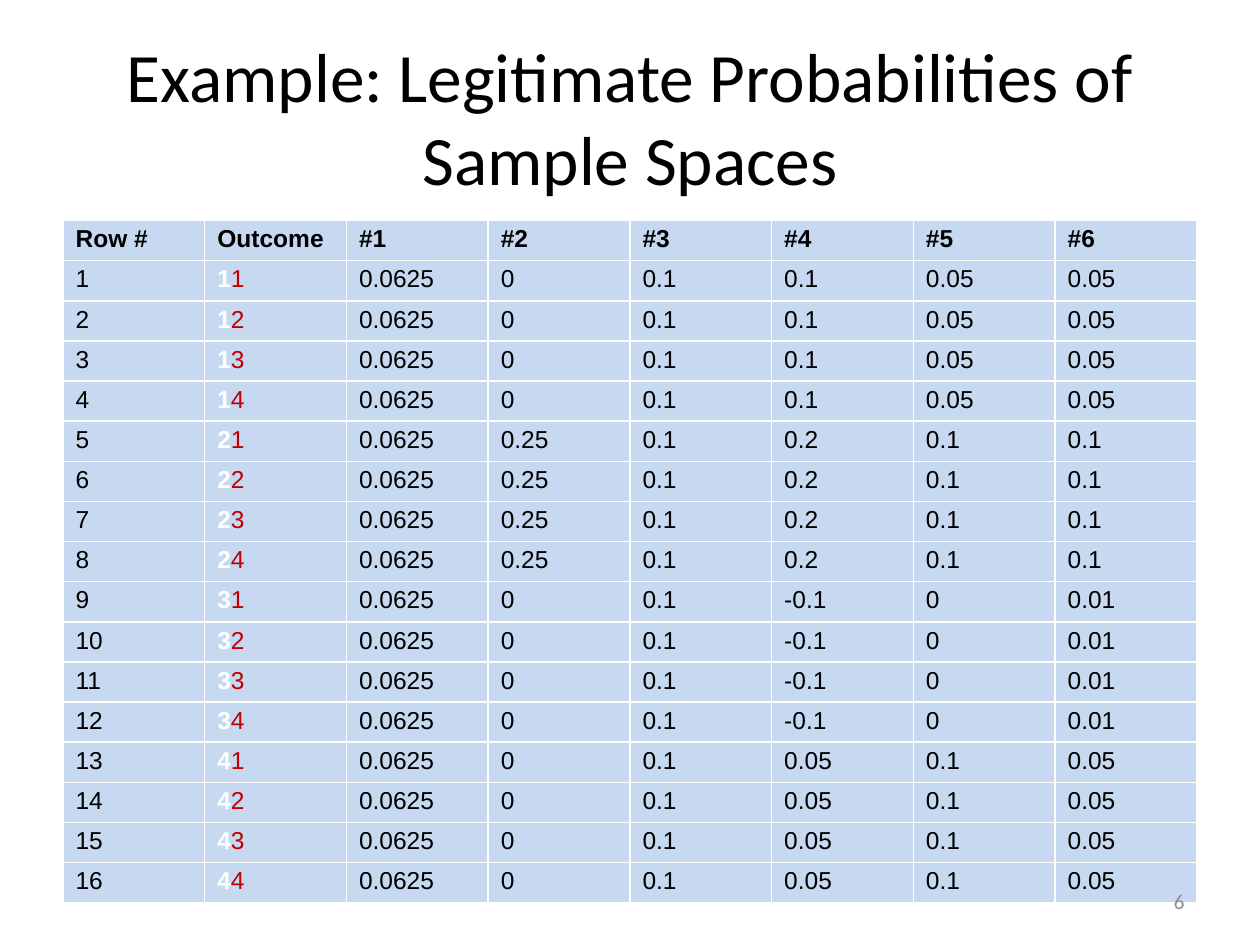
from lxml import etree
from pptx import Presentation
from pptx.dml.color import RGBColor
from pptx.enum.text import MSO_ANCHOR, PP_ALIGN
from pptx.oxml.ns import qn
from pptx.util import Inches, Pt

CENTER, RIGHT = PP_ALIGN.CENTER, PP_ALIGN.RIGHT
MIDDLE = MSO_ANCHOR.MIDDLE
TITLE_ONLY = 5

COLORS = {
    "text": "000000",
    "cell": "C6D9F1",
    "grid": "FFFFFF",
    "first_die": "FFFFFF",
    "second_die": "C00000",
    "page": "8C8C8C",
}
TITLE = "Example: Legitimate Probabilities of Sample Spaces"
HEADERS = ["Row #", "Outcome", "#1", "#2", "#3", "#4", "#5", "#6"]
# Probabilities depend only on the first of the two digits of an outcome
PROBABILITIES = {
    "1": ["0.0625", "0", "0.1", "0.1", "0.05", "0.05"],
    "2": ["0.0625", "0.25", "0.1", "0.2", "0.1", "0.1"],
    "3": ["0.0625", "0", "0.1", "-0.1", "0", "0.01"],
    "4": ["0.0625", "0", "0.1", "0.05", "0.1", "0.05"],
}


def add_run(paragraph, text, size, font, color, bold=False):
    run = paragraph.add_run()
    run.text = text
    run.font.size = Pt(size)
    run.font.name = font
    run.font.bold = bold
    run.font.color.rgb = RGBColor.from_string(COLORS[color])


def place_title(slide, box):
    title = slide.shapes.title
    title.left, title.top, title.width, title.height = box
    title.text_frame.vertical_anchor = MIDDLE
    title.text_frame.word_wrap = True
    paragraph = title.text_frame.paragraphs[0]
    paragraph.alignment = CENTER
    add_run(paragraph, TITLE, 39.6, "Calibri", "text")


def style_cell(cell):
    cell.margin_top = cell.margin_bottom = Inches(0.04)
    properties = cell._tc.get_or_add_tcPr()
    for side in ("lnL", "lnR", "lnT", "lnB"):
        line = etree.SubElement(properties, qn(f"a:{side}"), w=str(Pt(1)))
        fill = etree.SubElement(line, qn("a:solidFill"))
        etree.SubElement(fill, qn("a:srgbClr"), val=COLORS["grid"])
    cell.fill.solid()
    cell.fill.fore_color.rgb = RGBColor.from_string(COLORS["cell"])


def table_rows():
    """Each cell is a list of (text, color, bold) runs."""
    yield [[(header, "text", True)] for header in HEADERS]
    outcomes = [(first, second) for first in PROBABILITIES for second in "1234"]
    for number, (first, second) in enumerate(outcomes, start=1):
        outcome = [(first, "first_die", True), (second, "second_die", False)]
        values = [[(value, "text", False)] for value in PROBABILITIES[first]]
        yield [[(str(number), "text", False)], outcome, *values]


def place_probabilities(slide, box):
    rows = list(table_rows())
    width, height = box[2:]
    table = slide.shapes.add_table(len(rows), len(HEADERS), *box).table
    for column in table.columns:
        column.width = int(width / len(HEADERS))
    for row, contents in zip(table.rows, rows):
        row.height = int(height / len(rows))
        for cell, runs in zip(row.cells, contents):
            style_cell(cell)
            for text, color, bold in runs:
                add_run(cell.text_frame.paragraphs[0], text, 14, "Arial", color, bold)


def place_page_number(slide, box):
    frame = slide.shapes.add_textbox(*box).text_frame
    frame.word_wrap = True
    frame.vertical_anchor = MIDDLE
    paragraph = frame.paragraphs[0]
    paragraph.alignment = RIGHT
    add_run(paragraph, "6", 12, "Calibri", "page")


def main():
    presentation = Presentation()
    presentation.slide_width, presentation.slide_height = Inches(10), Inches(7.5)
    width, height = presentation.slide_width, presentation.slide_height
    slide = presentation.slides.add_slide(presentation.slide_layouts[TITLE_ONLY])

    def region(left, top, right, bottom):
        """Box between edges given as shares of the slide's size."""
        return (int(left * width), int(top * height),
                int((right - left) * width), int((bottom - top) * height))

    margin = 0.05
    place_title(slide, region(margin, 0.04, 1 - margin, 0.04 + 1 / 6))
    place_probabilities(slide, region(margin, 1.75 / 7.5, 1 - margin, 7.17 / 7.5))
    place_page_number(slide, region(0.72, 6.95 / 7.5, 1 - margin, 0.98))
    presentation.save("out.pptx")


if __name__ == "__main__":
    main()
